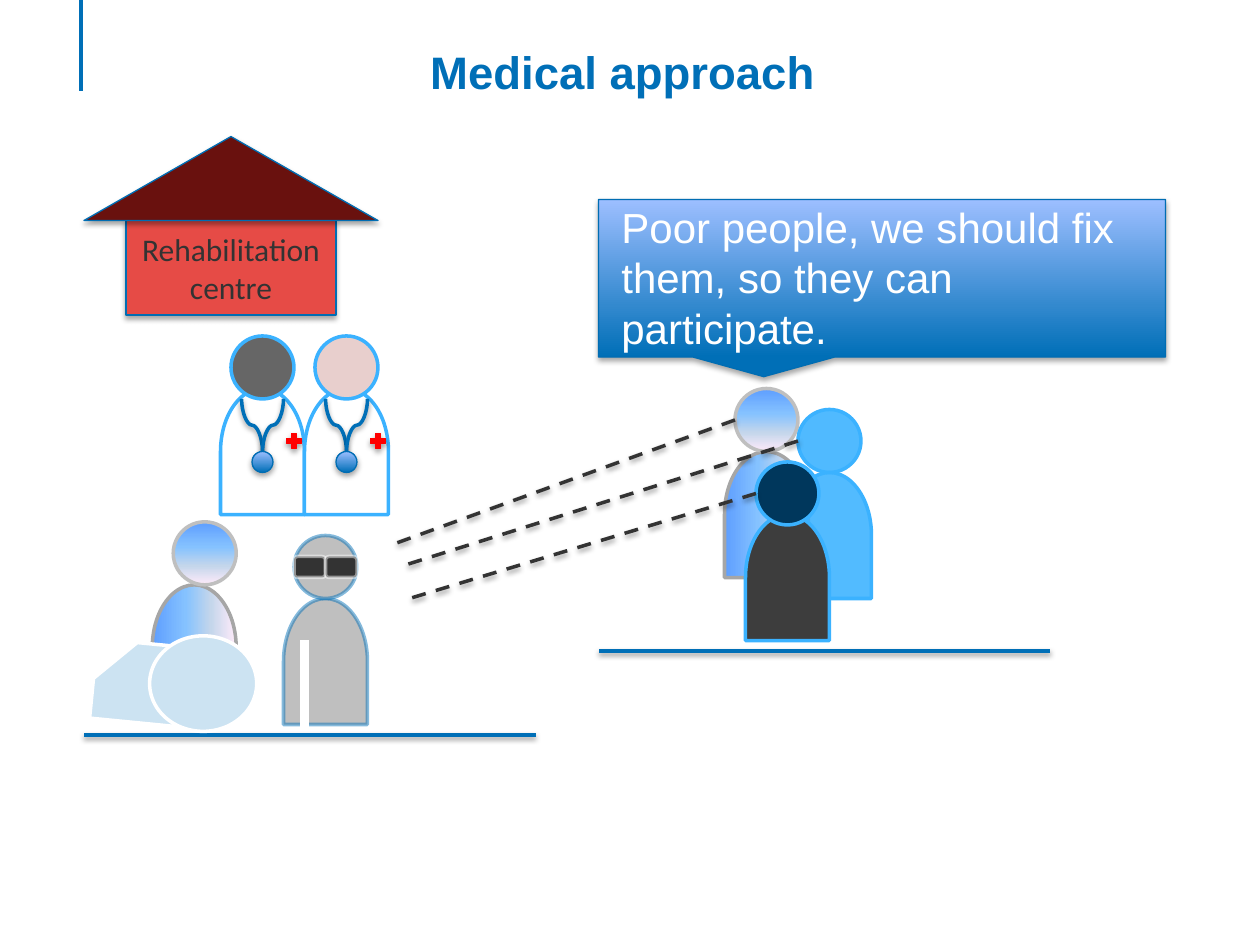
from dataclasses import dataclass

from lxml import etree
from pptx import Presentation
from pptx.dml.color import RGBColor
from pptx.enum.dml import MSO_LINE
from pptx.enum.shapes import MSO_CONNECTOR, MSO_SHAPE
from pptx.enum.text import MSO_ANCHOR, MSO_AUTO_SIZE, PP_ALIGN
from pptx.oxml.ns import qn
from pptx.util import Inches, Pt

BODY = MSO_SHAPE.FLOWCHART_DELAY
ROUND = MSO_SHAPE.FLOWCHART_CONNECTOR
OVAL = MSO_SHAPE.OVAL
PLUS = MSO_SHAPE.MATH_PLUS
LENS = MSO_SHAPE.FLOWCHART_ALTERNATE_PROCESS
STRAIGHT, CURVE = MSO_CONNECTOR.STRAIGHT, MSO_CONNECTOR.CURVE
LEFT, CENTER = PP_ALIGN.LEFT, PP_ALIGN.CENTER

COLORS = {
    "blue": "006FB7", "edge": "006DB3", "sky": "3BB2FF", "pale": "CCE3F2",
    "navy": "00375C", "white": "FFFFFF", "black": "000000", "dark": "333333",
    "coal": "3D3D3D", "gray": "666666", "silver": "BFBFBF", "steel": "A6A6A6",
    "skin": "E8CFCD", "red": "FF0000", "wall": "E64B46", "roof": "69110E",
    "light": "9CBEFF", "g1": "5E9EFF", "g2": "85C2FF", "g3": "C4D6EB", "g4": "FFEBFA",
}


@dataclass(frozen=True)
class Gradient:
    stops: tuple[tuple[int, str], ...]
    angle: int  # counter-clockwise degrees


@dataclass(frozen=True)
class Paint:
    fill: str | Gradient
    line: str
    width: float = 2
    fill_alpha: int = 100
    line_alpha: int = 100


@dataclass(frozen=True)
class Person:
    col: float
    row: float
    body: Paint
    head: Paint
    head_dx: float = 1
    head_dy: float = -6


DAWN = Gradient(((0, "g1"), (40, "g2"), (70, "g3"), (100, "g4")), 270)
GLOSS = Gradient(((0, "blue"), (100, "light")), 90)
DAWN_BODY, DAWN_HEAD = Paint(DAWN, "steel"), Paint(DAWN, "silver")
GLOSSY = Paint(GLOSS, "edge", 0.75)
BLIND = Paint("silver", "blue", line_alpha=47)
GLASSES = Paint("dark", "white", line_alpha=47)
CHAIR = Paint("pale", "white")

VISITORS = (
    Person(69, 43, DAWN_BODY, DAWN_HEAD),
    Person(75, 45, Paint("sky", "sky", fill_alpha=88), Paint("sky", "sky", fill_alpha=89)),
    Person(71, 49, Paint("coal", "sky"), Paint("navy", "sky"), head_dy=-5),
)
DOCTORS = tuple(
    Person(col, 37, Paint("white", "sky"), Paint(skin, "sky"), head_dy=-5)
    for col, skin in ((21, "gray"), (29, "skin"))
)
BLIND_PERSON = Person(27, 57, BLIND, BLIND)
SEATED_PERSON = Person(14.5, 55.7, DAWN_BODY, DAWN_HEAD, head_dx=2)
GAZES = ((70, 40, 37, 52), (76, 42, 38, 54), (72, 47, 39, 57))

prs = Presentation()
prs.slide_width, prs.slide_height = Inches(10), Inches(7.5)
slide = prs.slides.add_slide(prs.slide_layouts[5])
shapes = slide.shapes


def grid(*cells: float) -> list[int]:
    """Convert cells of a 120 by 90 grid to slide lengths."""
    return [round(c * prs.slide_width / 120) for c in cells]


def rgb(name: str) -> RGBColor:
    return RGBColor.from_string(COLORS[name])


def set_alpha(fill_parent, percent: int) -> None:
    if percent < 100:
        color = fill_parent.find(qn("a:solidFill"))[0]
        etree.SubElement(color, qn("a:alpha"), val=str(percent * 1000))


def set_gradient(sp, gradient: Gradient) -> None:
    sp.fill.gradient()
    sp.fill.gradient_angle = gradient.angle
    stops = sp.element.spPr.find(qn("a:gradFill")).find(qn("a:gsLst"))
    for old in list(stops):
        stops.remove(old)
    for pos, name in gradient.stops:
        stop = etree.SubElement(stops, qn("a:gs"), pos=str(pos * 1000))
        etree.SubElement(stop, qn("a:srgbClr"), val=COLORS[name])


def add_shadow(effects, alpha: int, dist: float) -> None:
    shadow = etree.SubElement(effects, qn("a:outerShdw"), blurRad=str(Pt(3.1)),
                              dist=str(Pt(dist)), dir="5400000", rotWithShape="0")
    color = etree.SubElement(shadow, qn("a:srgbClr"), val=COLORS["black"])
    etree.SubElement(color, qn("a:alpha"), val=str(alpha * 1000))


def add_shape(kind, col: float, row: float, cols: float, rows: float, paint: Paint,
              rotation: float = 0, flip: bool = False, shadow: bool = False):
    sp = shapes.add_shape(kind, *grid(col, row, cols, rows))
    sp.rotation = rotation
    sp_pr = sp.element.spPr
    if flip:
        sp_pr.find(qn("a:xfrm")).set("flipH", "1")
    if isinstance(paint.fill, Gradient):
        set_gradient(sp, paint.fill)
    else:
        sp.fill.solid()
        sp.fill.fore_color.rgb = rgb(paint.fill)
        set_alpha(sp_pr, paint.fill_alpha)
    sp.line.color.rgb = rgb(paint.line)
    sp.line.width = Pt(paint.width)
    set_alpha(sp_pr.find(qn("a:ln")), paint.line_alpha)
    sp.shadow.inherit = False
    if shadow:
        add_shadow(sp_pr.find(qn("a:effectLst")), 35, 1.8)
    return sp


def add_line(x1: float, y1: float, x2: float, y2: float, color: str = "blue",
             width: float = 2, kind=STRAIGHT, rotation: int = 0,
             dashed: bool = False, shadow: bool = True) -> None:
    cxn = shapes.add_connector(kind, *grid(x1, y1, x2, y2))
    cxn.line.color.rgb = rgb(color)
    cxn.line.width = Pt(width)
    if dashed:
        cxn.line.dash_style = MSO_LINE.DASH
    sp_pr = cxn.element.spPr
    if rotation:
        sp_pr.find(qn("a:xfrm")).set("rot", str(rotation * 60000))
    effects = etree.SubElement(sp_pr, qn("a:effectLst"))
    if shadow:
        add_shadow(effects, 38, 1.6)


def write(sp, text: str, size: float, color: str, font: str = "Arial", bold: bool = False,
          align=CENTER, anchor=MSO_ANCHOR.TOP, fit=MSO_AUTO_SIZE.NONE) -> None:
    tf = sp.text_frame
    tf.word_wrap, tf.auto_size, tf.vertical_anchor = True, fit, anchor
    p = tf.paragraphs[0]
    p.alignment = align
    r = p.add_run()
    r.text = text
    r.font.size, r.font.name, r.font.bold = Pt(size), font, bold
    r.font.color.rgb = rgb(color)


def add_person(person: Person) -> None:
    # The delay shape lies on its side: 12 by 8 cells, turned upright.
    add_shape(BODY, person.col - 2, person.row + 2, 12, 8, person.body, rotation=270)
    add_shape(ROUND, person.col + person.head_dx, person.row + person.head_dy, 6, 6,
              person.head)


def add_doctor(doctor: Person) -> None:
    add_person(doctor)
    col, row = doctor.col, doctor.row
    add_line(col + 5.5, row + 2.5, col + 0.5, row + 4.5, kind=CURVE, rotation=270)
    add_line(col + 7.5, row + 4.5, col + 2.5, row + 2.5, kind=CURVE, rotation=90)
    add_shape(OVAL, col + 3, row + 6, 2, 2, GLOSSY, shadow=True)
    add_shape(PLUS, col + 6, row + 4, 2, 2, Paint("red", "red", 0.75), shadow=True)


title = shapes.title
title.left, title.top, title.width, title.height = grid(9.7, 3.6, 99.2, 14.3)
write(title, "Medical approach", 26, "blue", bold=True)
add_line(7.7, 0, 7.7, 8.7, shadow=False)

for visitor in VISITORS:
    add_person(visitor)
add_person(BLIND_PERSON)
add_line(29, 61, 29, 70, "white", 4.75, shadow=False)

add_shape(MSO_SHAPE.RECTANGULAR_CALLOUT, 57, 19, 54, 15, GLOSSY, shadow=True)
for lens_col in (28, 31):
    add_shape(LENS, lens_col, 53, 3, 2, GLASSES)
speech = shapes.add_textbox(*grid(58, 18.6, 52, 10.9))
write(speech, "Poor people, we should fix them, so they can participate.", 24, "white",
      align=LEFT, fit=MSO_AUTO_SIZE.SHAPE_TO_FIT_TEXT)

for gaze in GAZES:
    add_line(*gaze, color="dark", dashed=True)
add_line(100, 62, 57, 62)
add_line(51, 70, 8, 70)

for doctor in DOCTORS:
    add_doctor(doctor)

house = add_shape(MSO_SHAPE.RECTANGLE, 12, 21, 20, 9, Paint("wall", "edge", 0.75), shadow=True)
write(house, "Rehabilitation centre", 18, "dark", font="Calibri", anchor=MSO_ANCHOR.MIDDLE)
add_shape(MSO_SHAPE.ISOSCELES_TRIANGLE, 8, 13, 28, 8, Paint("roof", "edge", 0.75), shadow=True)

add_person(SEATED_PERSON)
seat = add_shape(MSO_SHAPE.SNIP_1_RECTANGLE, 8.9, 61.2, 8, 7.6, CHAIR, rotation=5.6, flip=True)
seat.adjustments[0] = 0.5
add_shape(ROUND, 14.8, 60, 9.1, 10.2, CHAIR, rotation=90, flip=True)

prs.save("out.pptx")
